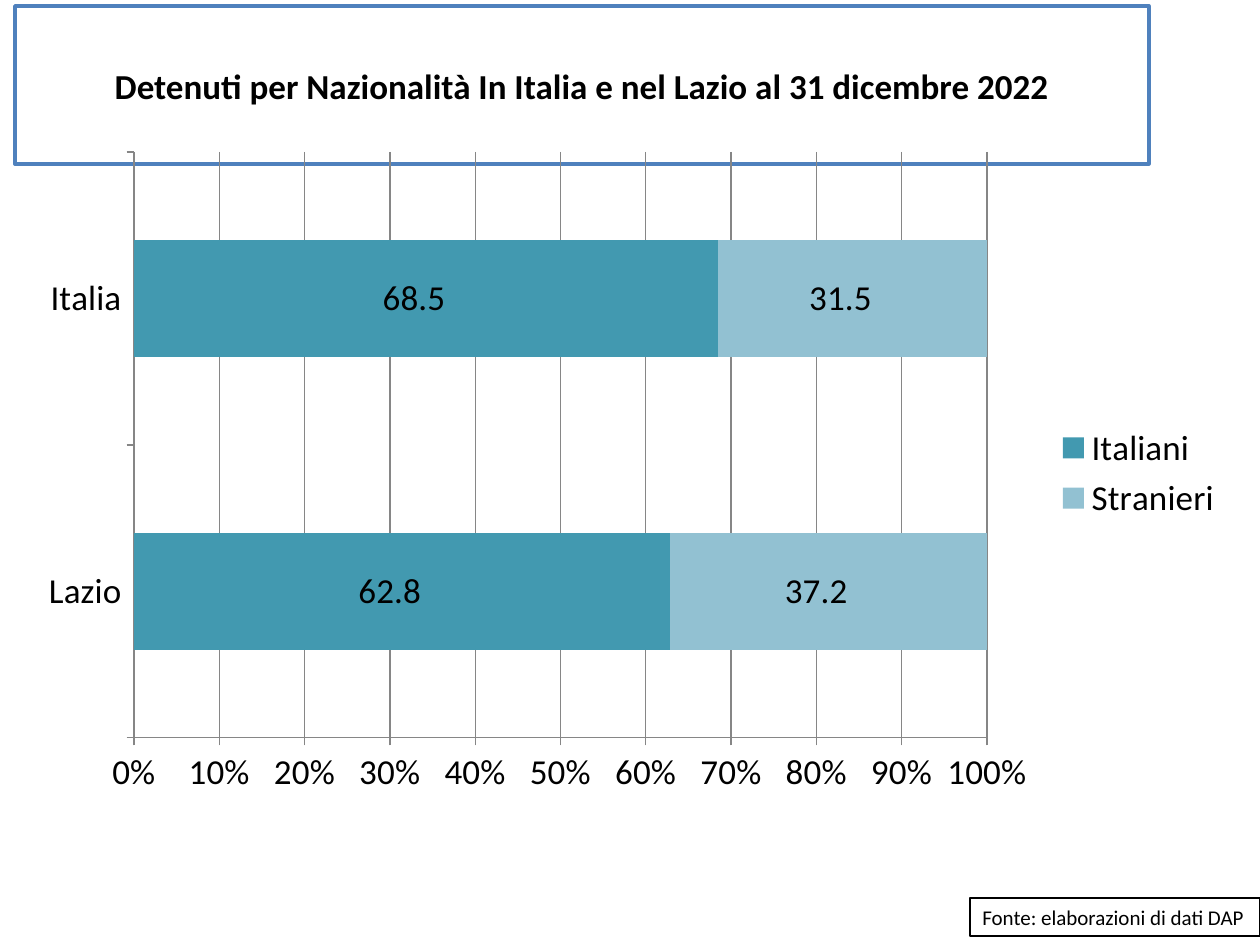
from lxml.etree import SubElement
from pptx import Presentation
from pptx.chart.data import CategoryChartData
from pptx.dml.color import RGBColor
from pptx.enum.chart import XL_CHART_TYPE, XL_LABEL_POSITION, XL_LEGEND_POSITION, XL_TICK_MARK
from pptx.enum.shapes import MSO_SHAPE
from pptx.enum.text import MSO_ANCHOR, PP_ALIGN
from pptx.oxml.ns import qn
from pptx.util import Pt

PX = 914400 // 126
FONT = "Calibri"
COLORS = {"text": "000000", "paper": "FFFFFF", "frame": "4F81BD", "grid": "868686",
          "Italiani": "4299B0", "Stranieri": "92C1D2"}
TITLE = "Detenuti per Nazionalità In Italia e nel Lazio al 31 dicembre 2022"
SOURCE = "Fonte: elaborazioni di dati DAP"
REGIONS = ["Lazio", "Italia"]
SHARES = {"Italiani": [62.8, 68.5], "Stranieri": [37.2, 31.5]}
LABEL_FORMAT = r'_-* #,##0.0\ _€_-;\-* #,##0.0\ _€_-;_-* "-"??\ _€_-;_-@_-'

TITLE_AREA = (15, 6, 1134, 158)
SOURCE_AREA = (970, 898, 290, 38)
CHART_AREA = (25, 139, 1211, 668)
PLOT_AREA = (134, 152, 853, 586)


def color(name):
    return RGBColor.from_string(COLORS[name])


def set_font(font, size, bold=False):
    font.name, font.size, font.bold = FONT, Pt(size), bold
    font.color.rgb = color("text")


def add_box(page, area, text, size, line, line_width, align, bold=False, wrap=True):
    box = page.shapes.add_shape(MSO_SHAPE.RECTANGLE, *(n * PX for n in area))
    box.shadow.inherit = False
    box.fill.solid()
    box.fill.fore_color.rgb = color("paper")
    box.line.color.rgb = color(line)
    box.line.width = Pt(line_width)
    frame = box.text_frame
    frame.word_wrap = wrap
    frame.vertical_anchor = MSO_ANCHOR.MIDDLE
    para = frame.paragraphs[0]
    para.alignment = align
    span = para.add_run()
    span.text = text
    set_font(span.font, size, bold)


def fix_plot_area(chart):
    """Pin the inner plot rectangle, as fractions of the chart area."""
    left, top, width, height = CHART_AREA
    x, y, w, h = PLOT_AREA
    plot_area = chart.plots[0]._element.getparent()
    layout = plot_area.find(qn("c:layout"))
    if layout is None:
        layout = SubElement(plot_area, qn("c:layout"))
        plot_area.insert(0, layout)
    manual = SubElement(layout, qn("c:manualLayout"))
    settings = [("layoutTarget", "inner"), ("xMode", "edge"), ("yMode", "edge"),
                ("x", (x - left) / width), ("y", (y - top) / height),
                ("w", w / width), ("h", h / height)]
    for tag, value in settings:
        SubElement(manual, qn("c:" + tag)).set("val", str(value))


def add_shares_chart(page):
    data = CategoryChartData()
    data.categories = REGIONS
    for name, values in SHARES.items():
        data.add_series(name, values)
    chart = page.shapes.add_chart(XL_CHART_TYPE.BAR_STACKED_100,
                                  *(n * PX for n in CHART_AREA), data).chart
    set_font(chart.font, 20)
    chart.has_title = False
    chart.has_legend = True
    chart.legend.position = XL_LEGEND_POSITION.RIGHT
    chart.legend.include_in_layout = False

    plot = chart.plots[0]
    plot.gap_width, plot.overlap, plot.vary_by_categories = 150, 100, False
    for series in plot.series:
        series.format.fill.solid()
        series.format.fill.fore_color.rgb = color(series.name)
        labels = series.data_labels
        labels.show_value = True
        labels.position = XL_LABEL_POSITION.CENTER
        labels.number_format = LABEL_FORMAT
        labels.number_format_is_linked = False
        set_font(labels.font, 20)

    shares = chart.value_axis
    shares.minimum_scale, shares.maximum_scale, shares.major_unit = 0, 1, 0.1
    shares.has_major_gridlines = True
    shares.tick_labels.number_format = "0%"
    shares.tick_labels.number_format_is_linked = False
    for axis in (chart.category_axis, shares):
        axis.major_tick_mark = XL_TICK_MARK.OUTSIDE
        set_font(axis.tick_labels.font, 20)
    for part in (chart.category_axis, shares, shares.major_gridlines):
        part.format.line.color.rgb = color("grid")
        part.format.line.width = Pt(0.75)
    fix_plot_area(chart)


deck = Presentation()
deck.slide_width, deck.slide_height = 1260 * PX, 945 * PX
page = deck.slides.add_slide(deck.slide_layouts[6])
add_box(page, TITLE_AREA, TITLE, 20, "frame", 2, PP_ALIGN.CENTER, bold=True)
add_box(page, SOURCE_AREA, SOURCE, 12, "text", 0.75, PP_ALIGN.LEFT, wrap=False)
add_shares_chart(page)
deck.save("out.pptx")
